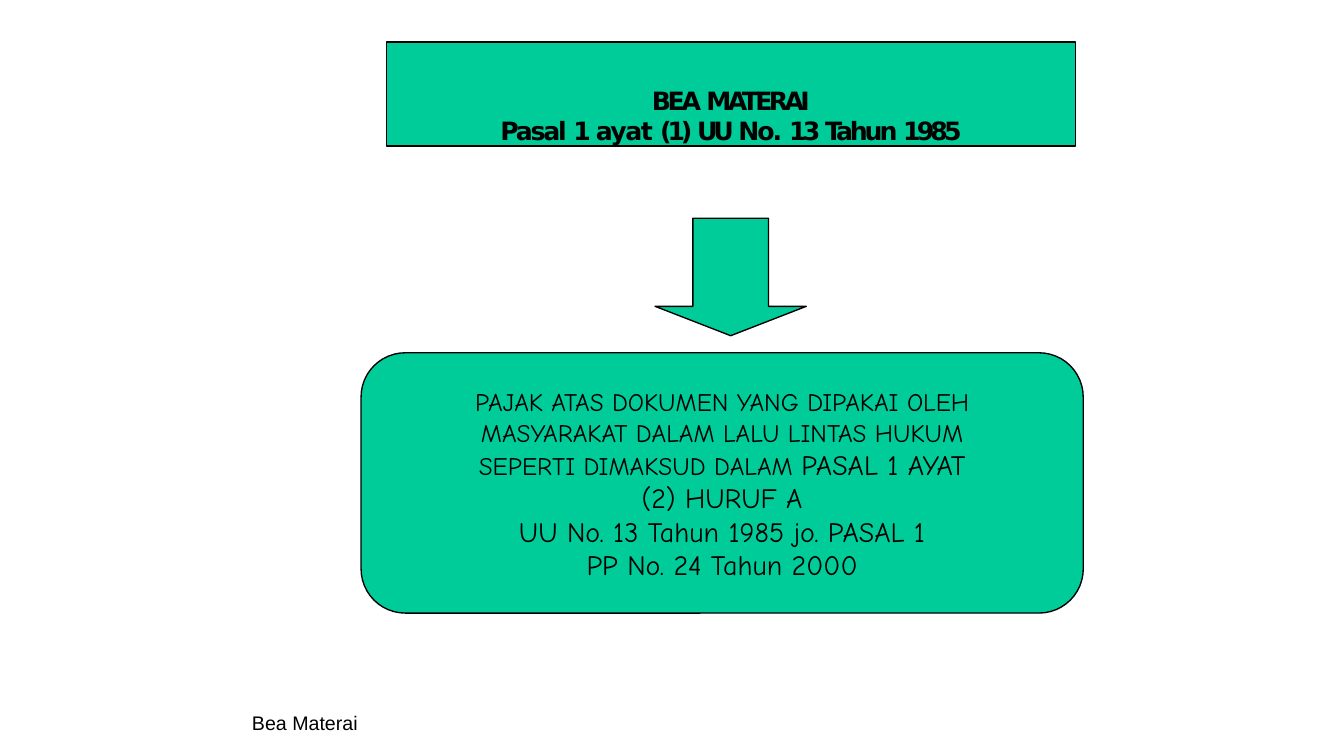
from pptx import Presentation
from pptx.dml.color import RGBColor
from pptx.enum.shapes import MSO_SHAPE
from pptx.enum.text import MSO_ANCHOR, MSO_AUTO_SIZE, PP_ALIGN
from pptx.util import Cm, Pt

ROUNDED = MSO_SHAPE.ROUNDED_RECTANGLE
DOWN_ARROW = MSO_SHAPE.DOWN_ARROW
TOP = MSO_ANCHOR.TOP
NO_AUTOFIT = MSO_AUTO_SIZE.NONE
LEFT = PP_ALIGN.LEFT
CENTER = PP_ALIGN.CENTER
TITLE_ONLY = 5

COLORS = {"panel": "00CC99", "ink": "000000"}

HEADING = [
    [("BEA ", -2.4), ("MATERAI", -2.6)],
    [("Pasal ", -1.6), ("1 ", -2.8), ("ayat ", -1.1), ("(1) ", -2.9),
     ("UU ", -3.1), ("No. ", -1.4), ("13 ", -2.8), ("Tahun ", -2.2),
     ("1985", -2.8)],
]
DEFINITION = [
    [("PAJAK ATAS DOKUMEN YANG DIPAKAI OLEH MASYARAKAT DALAM LALU LINTAS "
      "HUKUM SEPERTI DIMAKSUD DALAM ", 18), ("PASAL 1 AYAT (2) HURUF A", 20)],
    [("UU No. 13 Tahun 1985 jo. PASAL 1", 20)],
    [("PP No. 24 Tahun 2000", 20)],
]


class StampDutySlide:
    heading_font = "DejaVu Sans"
    definition_font = "Comic Neue"
    footer_font = "Arial"

    def __init__(self, deck):
        self.slide = deck.slides.add_slide(deck.slide_layouts[TITLE_ONLY])

    def paint(self, shape):
        shape.fill.solid()
        shape.fill.fore_color.rgb = RGBColor.from_string(COLORS["panel"])
        shape.line.color.rgb = RGBColor.from_string(COLORS["ink"])
        shape.line.width = Pt(0.96)

    def frame(self, shape, top, side=0):
        frame = shape.text_frame
        frame.word_wrap = True
        frame.auto_size = NO_AUTOFIT
        frame.vertical_anchor = TOP
        frame.margin_left = frame.margin_right = Cm(side)
        frame.margin_top, frame.margin_bottom = Cm(top), 0
        return frame

    def paragraph(self, frame, index, font, align=CENTER):
        paragraph = frame.add_paragraph() if index else frame.paragraphs[0]
        paragraph.alignment = align
        paragraph.font.name = font
        paragraph.font.color.rgb = RGBColor.from_string(COLORS["ink"])
        return paragraph

    def shape(self, kind, left, top, width, height, adjustments):
        shape = self.slide.shapes.add_shape(
            kind, Cm(left), Cm(top), Cm(width), Cm(height))
        shape.shadow.inherit = False
        for index, value in enumerate(adjustments):
            shape.adjustments[index] = value
        self.paint(shape)
        return shape

    def heading(self, lines, left, top, width, height):
        title = self.slide.shapes.title
        title.left, title.top = Cm(left), Cm(top)
        title.width, title.height = Cm(width), Cm(height)
        self.paint(title)
        frame = self.frame(title, top=1.09)
        for index, words in enumerate(lines):
            paragraph = self.paragraph(frame, index, self.heading_font)
            paragraph.font.size = Pt(18)
            paragraph.font.bold = True
            for word, spacing in words:
                run = paragraph.add_run()
                run.text = word
                run._r.get_or_add_rPr().set("spc", str(round(spacing * 100)))

    def arrow(self, left, top, width, height):
        self.shape(DOWN_ARROW, left, top, width, height, [0.5, 0.25])

    def definition(self, lines, left, top, width, height):
        panel = self.shape(ROUNDED, left, top, width, height, [0.17])
        frame = self.frame(panel, top=0.53, side=2.29)
        for index, parts in enumerate(lines):
            paragraph = self.paragraph(frame, index, self.definition_font)
            if index == 1:
                paragraph.line_spacing = Pt(23.9)
            for text, size in parts:
                run = paragraph.add_run()
                run.text = text
                run.font.size = Pt(size)

    def footer(self, text, left, top, width, height):
        box = self.slide.shapes.add_textbox(
            Cm(left), Cm(top), Cm(width), Cm(height))
        paragraph = self.paragraph(
            self.frame(box, top=0.06), 0, self.footer_font, LEFT)
        paragraph.text = text
        paragraph.font.size = Pt(14)


def main():
    deck = Presentation()
    deck.slide_width, deck.slide_height = Cm(33.87), Cm(19.05)
    page = StampDutySlide(deck)
    page.heading(HEADING, 9.74, 1.06, 17.36, 2.62)
    page.arrow(16.51, 5.5, 3.81, 2.96)
    page.definition(DEFINITION, 9.1, 8.89, 18.2, 6.56)
    page.footer("Bea Materai", 6.35, 17.85, 2.9, 0.65)
    deck.save("out.pptx")


if __name__ == "__main__":
    main()
